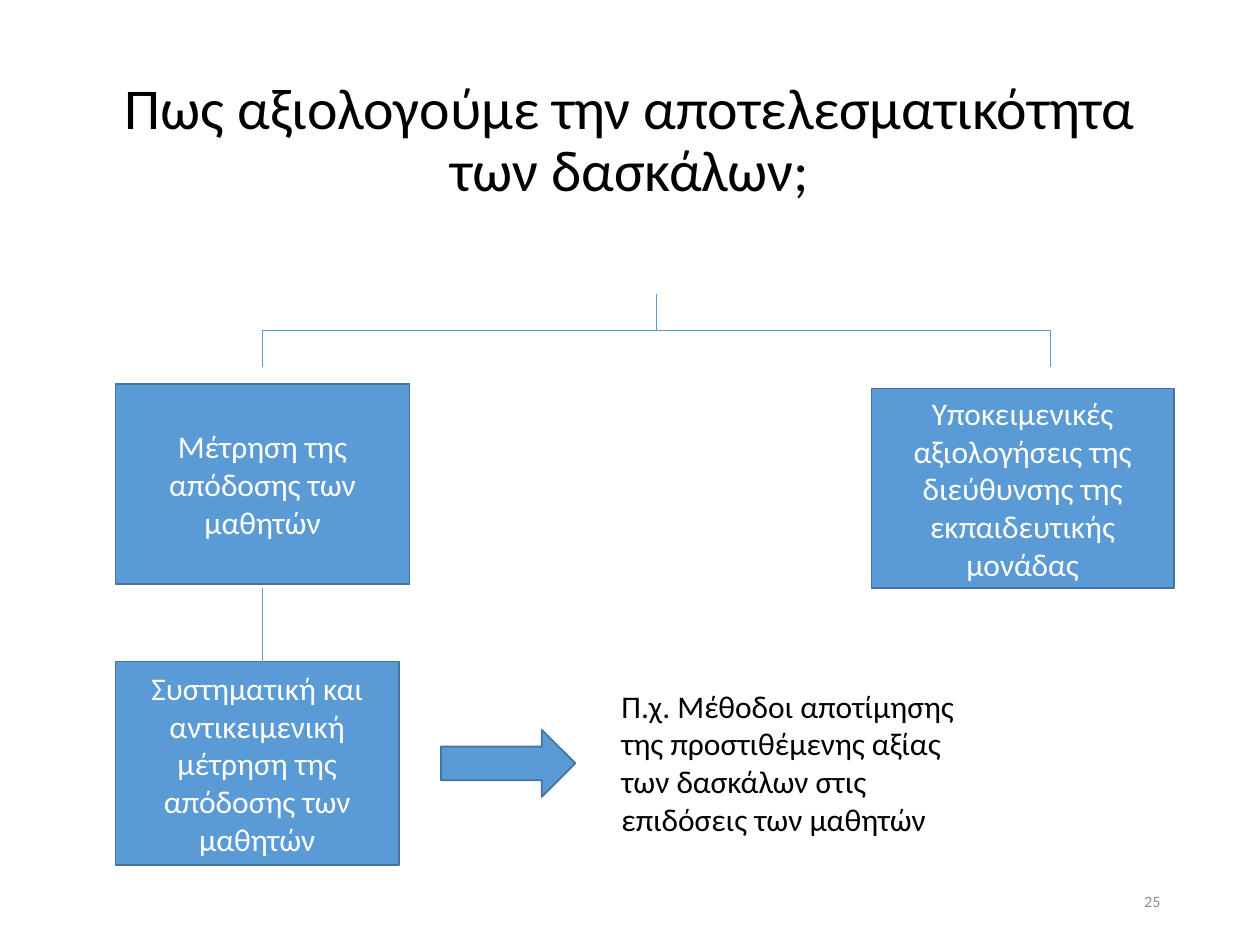
from pptx import Presentation
from pptx.dml.color import RGBColor
from pptx.enum.shapes import MSO_CONNECTOR, MSO_SHAPE
from pptx.enum.text import MSO_ANCHOR, MSO_AUTO_SIZE, PP_ALIGN
from pptx.oxml.ns import qn
from pptx.util import Inches, Pt

BLUE = RGBColor(0x5B, 0x9B, 0xD5)
DARK_BLUE = RGBColor(0x43, 0x73, 0x9E)
GRAY = RGBColor(0x8C, 0x8C, 0x8C)
BLACK = RGBColor(0, 0, 0)
WHITE = RGBColor(0xFF, 0xFF, 0xFF)
COLUMNS, ROWS = 120, 90

presentation = Presentation()
presentation.slide_width, presentation.slide_height = Inches(10), Inches(7.5)
slide = presentation.slides.add_slide(presentation.slide_layouts[5])
shapes = slide.shapes


def grid(*lengths):
    """Turn alternating column and row counts into slide lengths."""
    units = (presentation.slide_width / COLUMNS, presentation.slide_height / ROWS)
    return [round(length * units[i % 2]) for i, length in enumerate(lengths)]


def write(shape, text, size, color, alignment, anchor=MSO_ANCHOR.MIDDLE):
    frame = shape.text_frame
    frame.text = text
    frame.word_wrap = True
    frame.auto_size = MSO_AUTO_SIZE.NONE
    frame.vertical_anchor = anchor
    paragraph = frame.paragraphs[0]
    paragraph.alignment = alignment
    font = paragraph.runs[0].font
    font.name, font.size, font.color.rgb = "Calibri", Pt(size), color


title = shapes.title
title.left, title.top, title.width, title.height = grid(8.3, 4.8, 103.4, 17.4)
write(title, "Πως αξιολογούμε την αποτελεσματικότητα των δασκάλων;",
      33, BLACK, PP_ALIGN.CENTER)
title.text_frame.paragraphs[0].line_spacing = 0.9

slide_number = shapes.add_textbox(*grid(84.7, 83.4, 27, 4.8))
write(slide_number, "25", 9, GRAY, PP_ALIGN.RIGHT)

# Square bracket that splits the question into two branches
brace = shapes.add_shape(MSO_SHAPE.LEFT_BRACE, *grid(59, -6, 7, 75))
brace.rotation = 90
brace.adjustments[0] = 0
brace.adjustments[1] = 0.5
brace.shadow.inherit = False
brace.fill.background()
brace.line.color.rgb = BLUE
brace.line.width = Pt(0.5)

blocks = [
    (MSO_SHAPE.RECTANGLE, (11, 36.6, 28, 19), "Μέτρηση της απόδοσης των μαθητών"),
    (MSO_SHAPE.RECTANGLE, (83, 37, 28.8, 19),
     "Υποκειμενικές αξιολογήσεις της διεύθυνσης της εκπαιδευτικής μονάδας"),
    (MSO_SHAPE.RECTANGLE, (11, 63, 27, 19.4),
     "Συστηματική και αντικειμενική μέτρηση της απόδοσης των μαθητών"),
    (MSO_SHAPE.RIGHT_ARROW, (42, 69.5, 12.8, 6.4), ""),
]
for kind, place, text in blocks:
    block = shapes.add_shape(kind, *grid(*place))
    block.shadow.inherit = False
    block.fill.solid()
    block.fill.fore_color.rgb = BLUE
    block.line.color.rgb = DARK_BLUE
    block.line.width = Pt(1)
    if text:
        write(block, text, 18, WHITE, PP_ALIGN.CENTER)

example = shapes.add_textbox(*grid(58, 64.8, 35.6, 15.7))
write(example, "Π.χ. Μέθοδοι αποτίμησης της προστιθέμενης αξίας των δασκάλων "
      "στις επιδόσεις των μαθητών", 18, BLACK, PP_ALIGN.LEFT, MSO_ANCHOR.TOP)
example.text_frame.auto_size = MSO_AUTO_SIZE.SHAPE_TO_FIT_TEXT

branch = shapes.add_connector(MSO_CONNECTOR.STRAIGHT, *grid(25, 56, 25, 63))
branch.line.color.rgb = BLUE
branch.line.width = Pt(0.5)
properties = branch.element.spPr
properties.append(properties.makeelement(qn("a:effectLst"), {}))

presentation.save("out.pptx")
